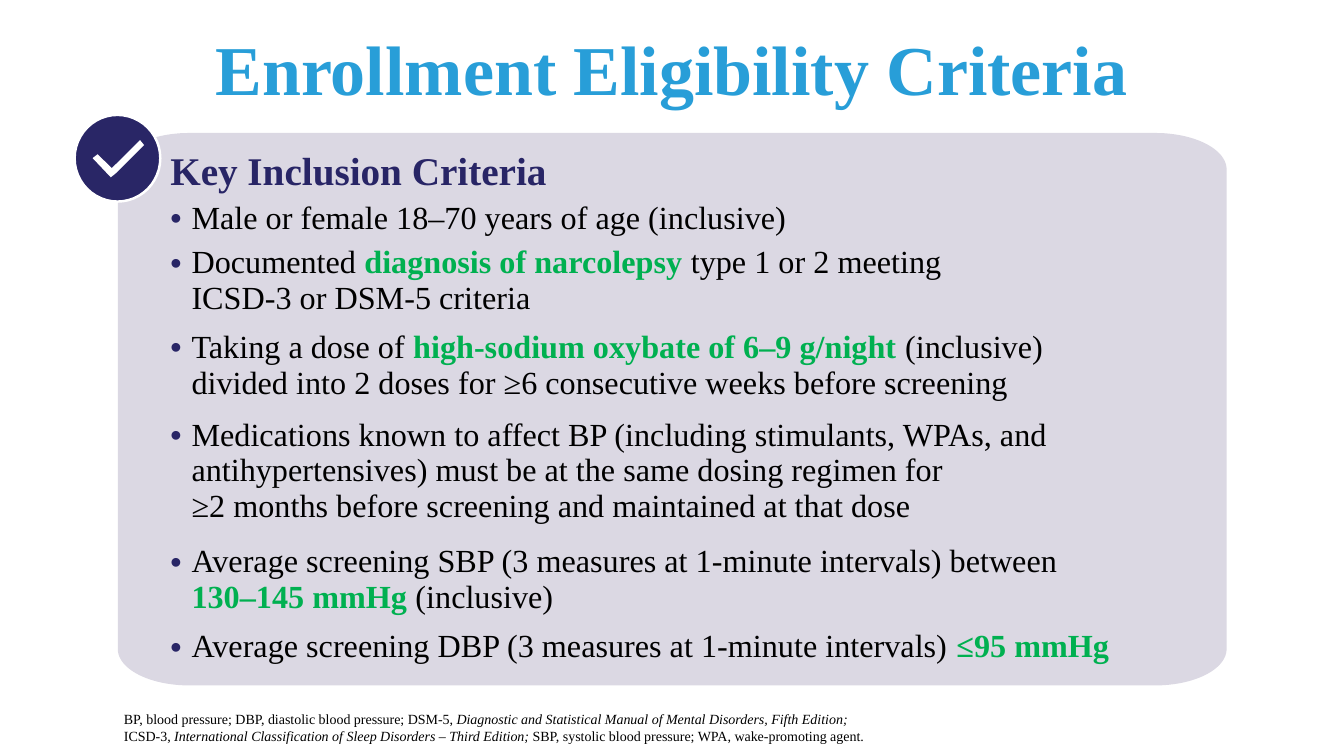
from dataclasses import dataclass
from math import cos, pi, sin

from lxml.etree import SubElement
from pptx import Presentation
from pptx.dml.color import RGBColor
from pptx.enum.shapes import MSO_SHAPE
from pptx.enum.text import MSO_ANCHOR, PP_ALIGN
from pptx.oxml.ns import qn
from pptx.util import Pt


@dataclass(frozen=True)
class Theme:
    font: str = "Times New Roman"
    title: str = "289ED8"
    heading: str = "282566"
    badge: str = "292666"
    card: str = "DBD8E3"
    accent: str = "00B050"
    text: str = "000000"
    white: str = "FFFFFF"
    title_size: float = 50
    heading_size: float = 28
    body_size: float = 23
    note_size: float = 10


NO_STYLE_NO_GRID = "{2D5ABB26-0587-4C30-8999-92F81FD0307C}"
HEADING = "Key Inclusion Criteria"
CRITERIA = [
    "Male or female 18–70 years of age (inclusive)",
    "Documented *diagnosis of narcolepsy* type 1 or 2 meeting\nICSD-3 or DSM-5 criteria",
    "Taking a dose of *high-sodium oxybate of 6–9 g/night* (inclusive)\n"
    "divided into 2 doses for ≥6 consecutive weeks before screening",
    "Medications known to affect BP (including stimulants, WPAs, and "
    "antihypertensives) must be at the same dosing regimen for\n"
    "≥2 months before screening and maintained at that dose",
    "Average screening SBP (3 measures at 1-minute intervals) between\n"
    "*130–145 mmHg* (inclusive)",
    "Average screening DBP (3 measures at 1-minute intervals) *≤95 mmHg*",
]
ROW_HEIGHTS = [31, 31.7, 60.5, 62.6, 90.7, 60.5, 40.3]
ABBREVIATIONS = (
    "BP, blood pressure; DBP, diastolic blood pressure; DSM-5, "
    "*Diagnostic and Statistical Manual of Mental Disorders, Fifth Edition;*\n"
    "ICSD-3, *International Classification of Sleep Disorders – Third Edition;* "
    "SBP, systolic blood pressure; WPA, wake-promoting agent."
)
CHECK_MARK = [(100.1, 100.1), (79.9, 120.2), (69.8, 110.2), (66.2, 113),
              (79.2, 126.7), (82.8, 123.8), (103, 103.7)]


def rounded_outline(left, top, width, height, rx, ry, steps=24):
    """Points of a rectangle whose corners are quarter ellipses."""
    right, bottom = left + width, top + height
    centres = [(right - rx, bottom - ry), (left + rx, bottom - ry),
               (left + rx, top + ry), (right - rx, top + ry)]
    angles = [(corner + step / steps) * pi / 2
              for corner in range(4) for step in range(steps + 1)]
    return [(centres[i // (steps + 1)][0] + rx * cos(angle),
             centres[i // (steps + 1)][1] + ry * sin(angle))
            for i, angle in enumerate(angles)]


class SlideBuilder:
    def __init__(self, slide, theme):
        self.slide = slide
        self.theme = theme

    def add_runs(self, paragraph, text, size, color, bold=False, accent=None):
        """Fill a paragraph; *marked* parts are bold in accent, or italic without one."""
        for index, part in enumerate(text.split("*")):
            marked = index % 2 == 1
            for line_number, line in enumerate(part.split("\n")):
                if line_number:
                    paragraph.add_line_break()
                if not line:
                    continue
                run = paragraph.add_run()
                run.text = line
                font = run.font
                font.name, font.size = self.theme.font, Pt(size)
                font.bold = bold or (marked and accent is not None)
                font.italic = marked and accent is None
                shown = accent if marked and accent else color
                font.color.rgb = RGBColor.from_string(shown)

    def text(self, box, text, size, color, bold=False, anchor=MSO_ANCHOR.TOP,
             align=PP_ALIGN.LEFT, spacing=1.0):
        frame = self.slide.shapes.add_textbox(*map(Pt, box)).text_frame
        frame.word_wrap = True
        frame.vertical_anchor = anchor
        paragraph = frame.paragraphs[0]
        paragraph.alignment = align
        paragraph.line_spacing = spacing
        self.add_runs(paragraph, text, size, color, bold)

    def paint(self, shape, fill, line=None, line_width=0):
        shape.shadow.inherit = False
        shape.fill.solid()
        shape.fill.fore_color.rgb = RGBColor.from_string(fill)
        if line:
            shape.line.color.rgb = RGBColor.from_string(line)
            shape.line.width = Pt(line_width)
        else:
            shape.line.fill.background()

    def outline(self, points, fill):
        start, *rest = [(Pt(x), Pt(y)) for x, y in points]
        builder = self.slide.shapes.build_freeform(*start)
        builder.add_line_segments(rest, close=True)
        self.paint(builder.convert_to_shape(), fill)

    def disc(self, box, fill, line, line_width):
        oval = self.slide.shapes.add_shape(MSO_SHAPE.OVAL, *map(Pt, box))
        self.paint(oval, fill, line, line_width)

    def bullet(self, paragraph, indent):
        properties = paragraph._p.get_or_add_pPr()
        properties.set("marL", str(Pt(indent)))
        properties.set("indent", str(-Pt(indent)))
        color = SubElement(properties, qn("a:buClr"))
        SubElement(color, qn("a:srgbClr"), val=self.theme.heading)
        SubElement(properties, qn("a:buFont"), typeface="Arial")
        SubElement(properties, qn("a:buChar"), char="•")

    def criteria_table(self, left, top, width, heading, criteria, heights):
        theme = self.theme
        table = self.slide.shapes.add_table(
            len(heights), 1, Pt(left), Pt(top), Pt(width), Pt(sum(heights))).table
        table.first_row = table.horz_banding = False
        table._tbl.tblPr.find(qn("a:tableStyleId")).text = NO_STYLE_NO_GRID
        for index, (text, height) in enumerate(zip([heading, *criteria], heights)):
            table.rows[index].height = Pt(height)
            cell = table.cell(index, 0)
            cell.fill.background()
            cell.margin_left = cell.margin_right = Pt(0)
            cell.margin_top = cell.margin_bottom = Pt(0)
            paragraph = cell.text_frame.paragraphs[0]
            if index == 0:
                paragraph.line_spacing = 0.8
                self.add_runs(paragraph, text, theme.heading_size, theme.heading, bold=True)
            else:
                self.bullet(paragraph, indent=15.1)
                self.add_runs(paragraph, text, theme.body_size, theme.text,
                              accent=theme.accent)


def main():
    theme = Theme()
    presentation = Presentation()
    presentation.slide_width, presentation.slide_height = Pt(960), Pt(540)
    slide = presentation.slides.add_slide(presentation.slide_layouts[6])
    builder = SlideBuilder(slide, theme)

    builder.text((66.2, 0, 828, 104.4), "Enrollment Eligibility Criteria",
                 theme.title_size, theme.title, bold=True,
                 anchor=MSO_ANCHOR.MIDDLE, align=PP_ALIGN.CENTER, spacing=0.9)
    builder.text((81.4, 504, 856.8, 31.7), ABBREVIATIONS, theme.note_size, theme.text)
    builder.outline(rounded_outline(84.2, 95, 792, 394.6, rx=51, ry=26), theme.card)
    builder.disc((53.3, 82.1, 61.2, 61.9), theme.badge, theme.white, 1.77)
    builder.outline(CHECK_MARK, theme.white)
    builder.criteria_table(121.7, 112.3, 736.6, HEADING, CRITERIA, ROW_HEIGHTS)
    presentation.save("out.pptx")


if __name__ == "__main__":
    main()
